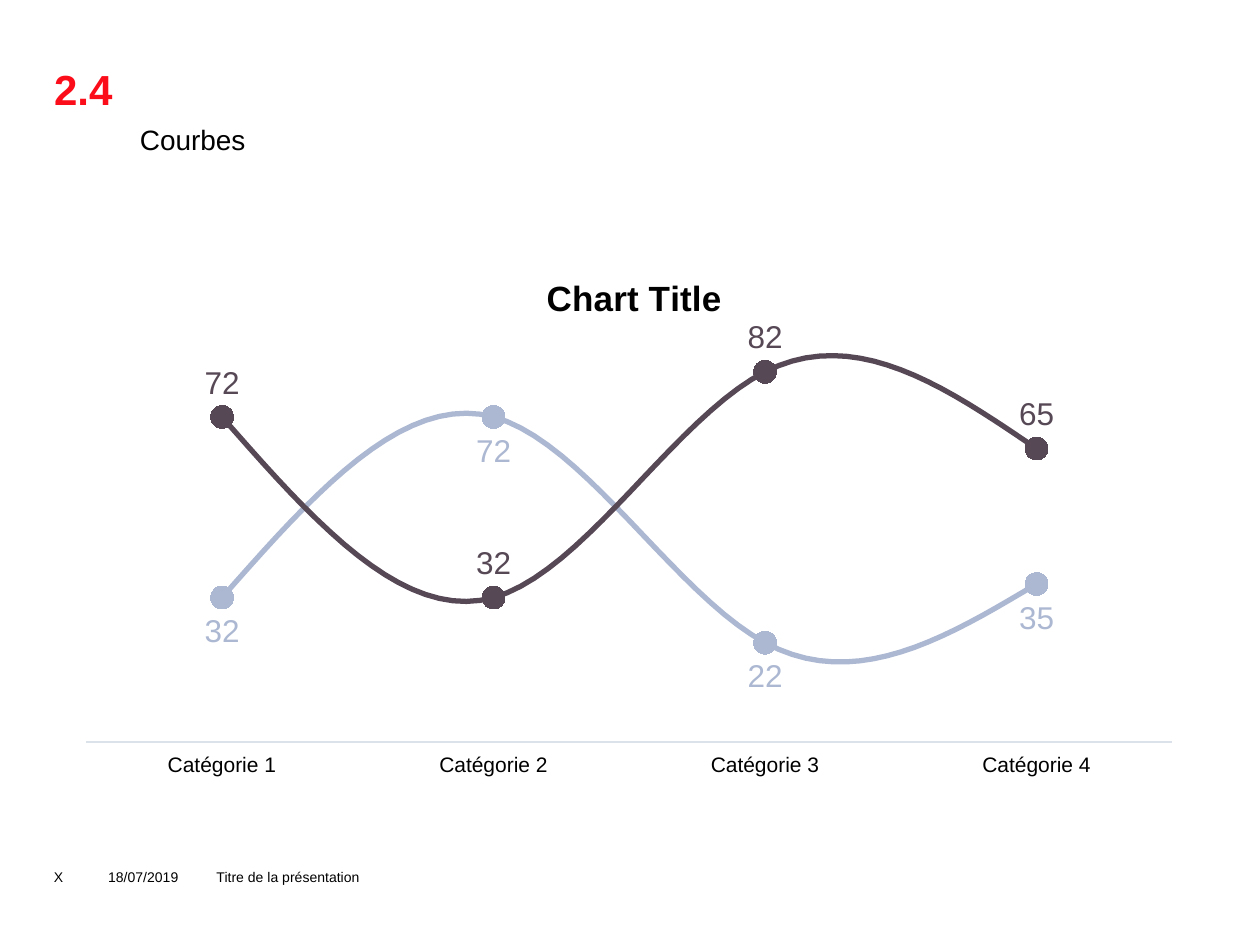
from lxml import etree
from pptx import Presentation
from pptx.chart.data import CategoryChartData as Data
from pptx.dml.color import RGBColor as Rgb
from pptx.enum.chart import XL_CHART_TYPE as Kind
from pptx.enum.chart import XL_LABEL_POSITION as Pos
from pptx.enum.chart import XL_MARKER_STYLE as Mark
from pptx.enum.chart import XL_TICK_LABEL_POSITION as Tick
from pptx.enum.chart import XL_TICK_MARK as Tmark
from pptx.enum.text import MSO_ANCHOR as Anchor
from pptx.enum.text import PP_ALIGN as Align
from pptx.oxml.ns import qn
from pptx.util import Inches, Pt

HUES = {"red": "FC0D1A", "black": "000000", "blue": "ACB8D2",
        "plum": "574855", "axis": "DBE2EA", "text": "314051"}
FACE = "Arial"
CATS = [f"Catégorie {n}" for n in range(1, 5)]
LINES = [
    ("Series 1", (32, 72, 22, 35), "blue", Pos.BELOW),
    ("Series 2", (72, 32, 82, 65), "plum", Pos.ABOVE),
]
FOOT = [
    ("X", 0.33, 0.43),
    ("18/07/2019", 0.76, 0.87),
    ("Titre de la présentation", 1.62, 8.04),
]


def hue(name):
    return Rgb.from_string(HUES[name])


def style(font, size, name, bold=False):
    font.name, font.size, font.bold = FACE, Pt(size), bold
    font.color.rgb = hue(name)


def place(shape, *box):
    shape.left, shape.top, shape.width, shape.height = map(Inches, box)


def write(shape, text, size, name, anchor, insets, bold=False):
    frame = shape.text_frame
    frame.text = text
    frame.word_wrap = True
    frame.vertical_anchor = anchor
    (frame.margin_left, frame.margin_top,
     frame.margin_right, frame.margin_bottom) = map(Inches, insets)
    para = frame.paragraphs[0]
    para.alignment = Align.LEFT
    para.space_before = Pt(0)
    style(para.runs[0].font, size, name, bold)
    return para


def add_heads(slide):
    title, body = slide.placeholders
    place(title, 0.33, 0.5, 0.65, 0.41)
    para = write(title, "2.4", 24, "red", Anchor.TOP, (0.1, 0.05, 0, 0.05), True)
    para.line_spacing = 0.9
    place(body, 0.99, 0.92, 8.08, 0.37)
    para = write(body, "Courbes", 16, "black", Anchor.MIDDLE,
                 (0.04, 0.05, 0.1, 0.05))
    props = para._p.get_or_add_pPr()
    props.set("marL", str(Inches(0.08)))
    props.set("indent", "0")
    etree.SubElement(props, qn("a:buNone"))


def add_foot(slide, text, left, width):
    box = slide.shapes.add_textbox(*map(Inches, (left, 6.76, width, 0.4)))
    write(box, text, 8, "black", Anchor.MIDDLE, (0.1, 0.05, 0.1, 0.05))


def set_layout(parent, after, **vals):
    for old in parent.findall(qn("c:layout")):
        parent.remove(old)
    layout = etree.Element(qn("c:layout"))
    manual = etree.SubElement(layout, qn("c:manualLayout"))
    for tag, val in vals.items():
        etree.SubElement(manual, qn(f"c:{tag}")).set("val", str(val))
    if after is None:
        parent.insert(0, layout)
    else:
        after.addnext(layout)


def style_line(line, name, pos):
    line.smooth = True
    line.format.line.color.rgb = hue(name)
    line.format.line.width = Pt(3)
    mark = line.marker
    mark.style, mark.size = Mark.CIRCLE, 13
    mark.format.fill.solid()
    mark.format.fill.fore_color.rgb = hue(name)
    mark.format.line.color.rgb = hue(name)
    labels = line.data_labels
    labels.show_value = True
    labels.position = pos
    style(labels.font, 18, name)


def style_axes(chart):
    cat, val = chart.category_axis, chart.value_axis
    cat.major_tick_mark = cat.minor_tick_mark = Tmark.NONE
    cat.tick_label_position = Tick.LOW
    cat.format.line.color.rgb = hue("axis")
    cat.format.line.width = Pt(0.75)
    style(cat.tick_labels.font, 12, "black")
    val.minimum_scale, val.maximum_scale = 0, 90
    val.has_major_gridlines = False
    val.visible = False


def add_curves(slide):
    data = Data()
    data.categories = CATS
    for name, vals, _, _ in LINES:
        data.add_series(name, vals)
    box = map(Inches, (0.57, 1.92, 8.85, 4.33))
    chart = slide.shapes.add_chart(Kind.LINE_MARKERS, *box, data).chart
    style(chart.font, 10, "text")
    chart.has_legend = False
    chart.has_title = True
    title = chart.chart_title
    title.text_frame.text = "Chart Title"
    style(title.text_frame.paragraphs[0].runs[0].font, 20, "black", True)
    root = title._element
    set_layout(root, root.find(qn("c:tx")),
               xMode="edge", yMode="edge", x=0.42, y=0.05)
    area = chart._chartSpace.find(f".//{qn('c:plotArea')}")
    set_layout(area, None, layoutTarget="inner", xMode="edge", yMode="edge",
               x=0.013, y=0.172, w=0.974, h=0.745)
    style_axes(chart)
    plot = chart.plots[0]
    plot.vary_by_categories = False
    for line, (_, _, name, pos) in zip(plot.series, LINES):
        style_line(line, name, pos)


def main():
    deck = Presentation()
    deck.slide_width, deck.slide_height = Inches(10), Inches(7.5)
    slide = deck.slides.add_slide(deck.slide_layouts[1])
    add_heads(slide)
    add_curves(slide)
    for item in FOOT:
        add_foot(slide, *item)
    deck.save("out.pptx")


if __name__ == "__main__":
    main()
